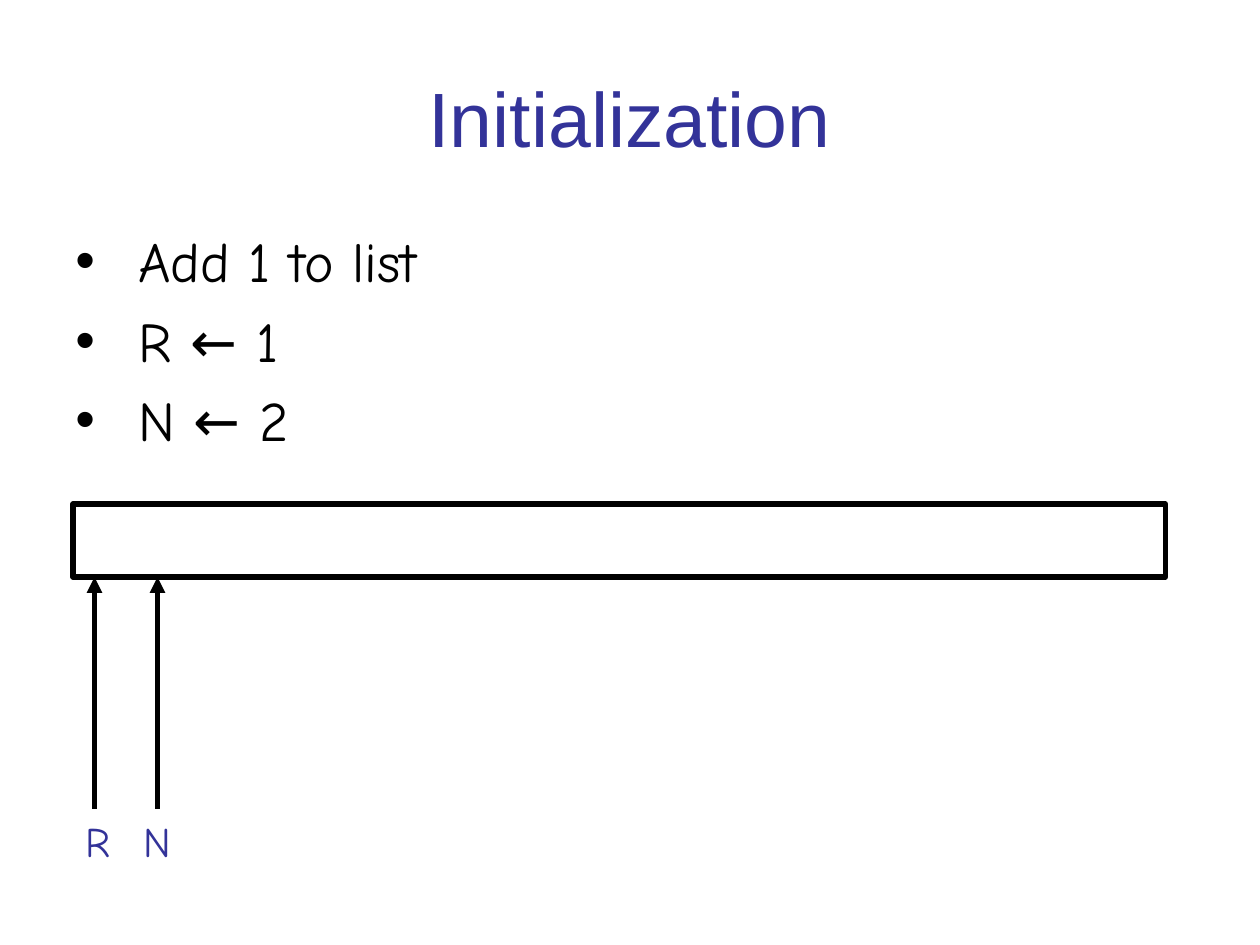
from lxml import etree
from pptx import Presentation
from pptx import util as u
from pptx.dml.color import RGBColor
from pptx.enum import shapes, text
from pptx.oxml.ns import qn

WIDTH, HEIGHT = 10, 7.5
MARGIN = 0.05 * WIDTH
BLACK, BLUE = "000000", "333399"
HEADING_FONT, BODY_FONT = "Arial", "Comic Neue"
LIST_LEFT, LIST_TOP, LIST_BOTTOM = 0.58, 4, 4.58
POINTER_BOTTOM = 6.42


def color(value):
    return RGBColor.from_string(value)


def style(para, size, font, value, align):
    para.font.size = u.Pt(size)
    para.font.name = font
    para.font.color.rgb = color(value)
    para.alignment = align


def add_text(page, left, top, width, height, lines, size, font, value,
             align=text.PP_ALIGN.LEFT, anchor=text.MSO_ANCHOR.TOP):
    box = page.shapes.add_textbox(*map(u.Inches, (left, top, width, height)))
    frame = box.text_frame
    frame.word_wrap = True
    frame.vertical_anchor = anchor
    frame.text = "\n".join(lines)
    for para in frame.paragraphs:
        style(para, size, font, value, align)
    return frame


def add_bullets(frame, indent, space):
    for para in frame.paragraphs:
        para.space_before = u.Pt(space)
        props = para._p.get_or_add_pPr()
        props.set("marL", str(u.Inches(indent)))
        props.set("indent", str(-u.Inches(indent)))
        # Bullet elements belong before the default run properties
        defaults = props.find(qn("a:defRPr"))
        for tag, key, value in (("a:buFont", "typeface", HEADING_FONT),
                                ("a:buChar", "char", "•")):
            bullet = etree.Element(qn(tag))
            bullet.set(key, value)
            defaults.addprevious(bullet)


def add_list_bar(page):
    bar = page.shapes.add_shape(
        shapes.MSO_SHAPE.RECTANGLE,
        *map(u.Inches, (LIST_LEFT, LIST_TOP, 8.67, LIST_BOTTOM - LIST_TOP)))
    bar.shadow.inherit = False
    bar.fill.background()
    bar.line.color.rgb = color(BLACK)
    bar.line.width = u.Pt(3)


def add_pointer(page, x, label, label_left, label_width):
    arrow = page.shapes.add_connector(
        shapes.MSO_CONNECTOR.STRAIGHT,
        *map(u.Inches, (x, POINTER_BOTTOM, x, LIST_BOTTOM)))
    arrow.line.color.rgb = color(BLACK)
    arrow.line.width = u.Pt(3)
    props = arrow._element.spPr
    etree.SubElement(props.find(qn("a:ln")), qn("a:tailEnd"), type="triangle")
    etree.SubElement(props, qn("a:effectLst"))
    add_text(page, label_left, POINTER_BOTTOM, label_width, 0.5, [label],
             24, BODY_FONT, BLUE, text.PP_ALIGN.RIGHT)


def main():
    deck = Presentation()
    deck.slide_width, deck.slide_height = u.Inches(WIDTH), u.Inches(HEIGHT)
    page = deck.slides.add_slide(deck.slide_layouts[6])
    content_width = WIDTH - 2 * MARGIN

    # Title
    add_text(page, MARGIN, 0.04 * HEIGHT, content_width, 1.25,
             ["Initialization"], 44, HEADING_FONT, BLUE,
             text.PP_ALIGN.CENTER, text.MSO_ANCHOR.MIDDLE)

    # Steps
    steps = add_text(page, MARGIN, 1.75, content_width, 4.95,
                     ["Add 1 to list", "R ← 1", "N ← 2"],
                     32, BODY_FONT, BLACK)
    add_bullets(steps, 0.5, 7)

    # List with its two pointers
    add_list_bar(page)
    add_pointer(page, 0.75, "R", LIST_LEFT, 0.38)
    add_pointer(page, 1.25, "N", 0.83, 0.63)

    deck.save("out.pptx")


if __name__ == "__main__":
    main()
